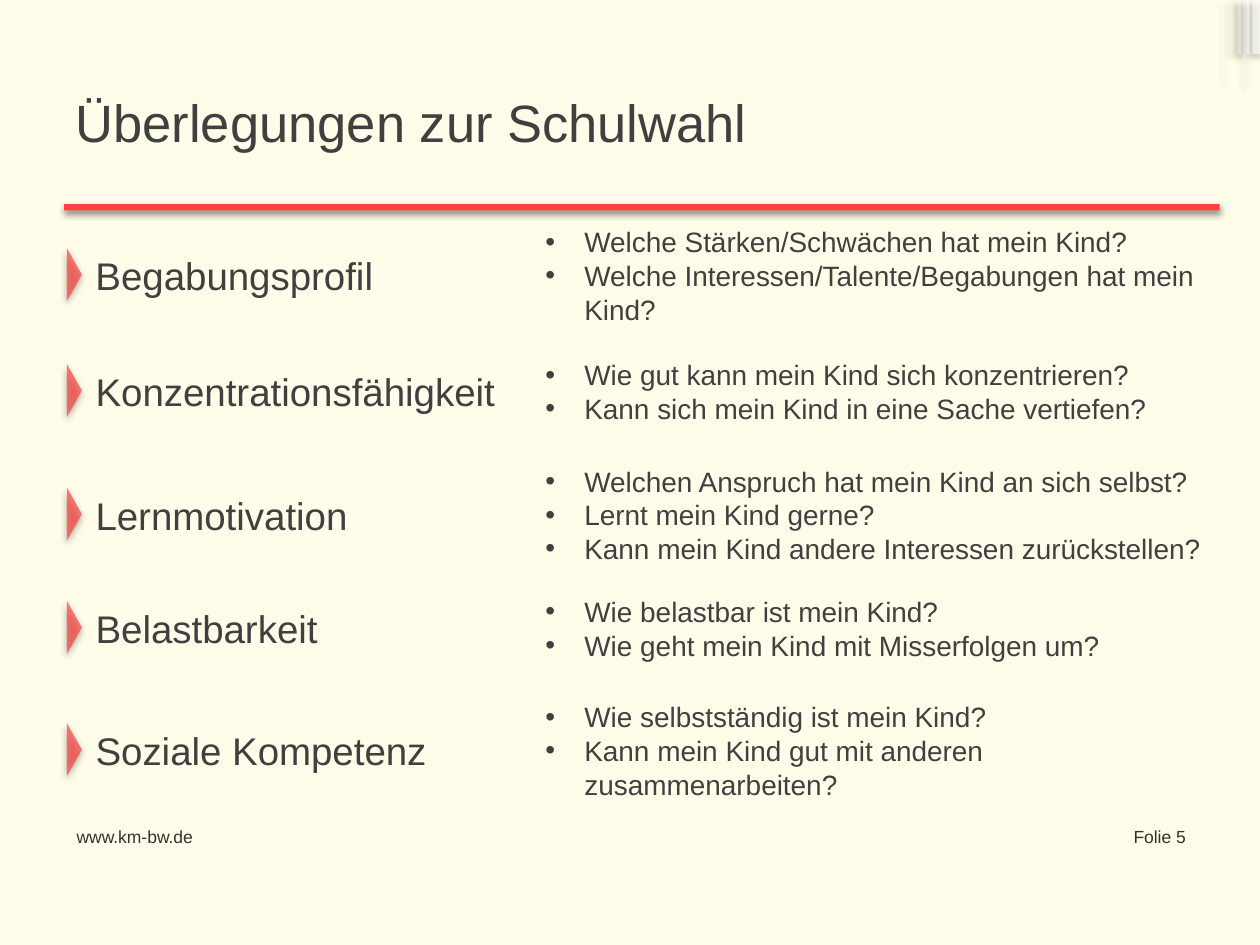
from lxml import etree
from pptx import Presentation
from pptx.dml.color import RGBColor
from pptx.enum.shapes import MSO_SHAPE
from pptx.enum.text import MSO_ANCHOR, MSO_AUTO_SIZE, PP_ALIGN
from pptx.oxml.ns import qn
from pptx.util import Inches, Pt

COLORS = {"cream": "FFFDE9", "red": "FF4040", "white": "FFFFFF",
          "shadow": "000000", "text": "404040", "footer": "323232"}

deck = Presentation()
deck.slide_width, deck.slide_height = Inches(10), Inches(7.5)
page = deck.slides.add_slide(deck.slide_layouts[5])
page.background.fill.solid()
page.background.fill.fore_color.rgb = RGBColor.from_string(COLORS["cream"])


def add_box(kind, left, top, width, height, color=None, opacity=100, shadow=0):
    """Add a borderless shape; opacity and shadow strength are percentages."""
    box = page.shapes.add_shape(
        kind, Inches(left), Inches(top), Inches(width), Inches(height))
    box.line.fill.background()
    box.shadow.inherit = False
    if color:
        box.fill.solid()
        box.fill.fore_color.rgb = RGBColor.from_string(COLORS[color])
        if opacity < 100:
            fill_color = box.fill._xPr.find(".//" + qn("a:srgbClr"))
            etree.SubElement(fill_color, qn("a:alpha"), val=str(opacity * 1000))
    else:
        box.fill.background()
    if shadow:
        effects = box._element.spPr.find(qn("a:effectLst"))
        outer = etree.SubElement(
            effects, qn("a:outerShdw"), blurRad=str(Pt(4)), dist=str(Pt(2)),
            dir="5400000", algn="ctr", rotWithShape="0")
        shade = etree.SubElement(outer, qn("a:srgbClr"), val=COLORS["shadow"])
        etree.SubElement(shade, qn("a:alpha"), val=str(shadow * 1000))
    return box


def write(box, lines, size, color="text", align=PP_ALIGN.LEFT, anchor=MSO_ANCHOR.MIDDLE):
    """Fill a box with one paragraph per line in a uniform font."""
    frame = box.text_frame
    frame.word_wrap = True
    frame.auto_size = MSO_AUTO_SIZE.NONE
    frame.vertical_anchor = anchor
    frame.text = "\n".join(lines)
    for para in frame.paragraphs:
        para.alignment = align
        for span in para.runs:
            span.font.name = "Arial"
            span.font.size = Pt(size)
            span.font.color.rgb = RGBColor.from_string(COLORS[color])
    return frame.paragraphs


# Corner stripes: left, width, height, opacity
for left, width, height, opacity in [
        (9.89, 0.03, 0.43, 65), (9.94, 0.06, 0.43, 65), (9.7, 0.01, 0.64, 30),
        (9.87, 0.01, 0.68, 60), (9.75, 0.06, 0.43, 20), (9.82, 0.03, 0.43, 40)]:
    add_box(MSO_SHAPE.RECTANGLE, left, 0, width, height, "white", opacity, 40)

# Footer
for text, left, width, align in [
        ("www.km-bw.de", 0.51, 1.33, PP_ALIGN.LEFT),
        ("Folie 5", 8.54, 0.97, PP_ALIGN.RIGHT)]:
    box = page.shapes.add_textbox(Inches(left), Inches(6.51), Inches(width), Inches(0.39))
    write(box, [text], 10, "footer", align, MSO_ANCHOR.TOP)

# Title and rule
title = page.shapes.title
title.left, title.top, title.width, title.height = (
    Inches(0.5), Inches(0.61), Inches(9), Inches(0.77))
heading = write(title, ["Überlegungen zur Schulwahl"], 30)[0]
heading.line_spacing = 0.9
heading.space_after = Pt(4.5)
add_box(MSO_SHAPE.RECTANGLE, 0.51, 1.62, 9.17, 0.05, "red", shadow=45)

# Criteria: top, label width, label, question width, questions
CRITERIA = [
    (1.79, 2.53, "Begabungsprofil", 5.44,
     ["Welche Stärken/Schwächen hat mein Kind?",
      "Welche Interessen/Talente/Begabungen hat mein Kind?"]),
    (2.71, 3.45, "Konzentrationsfähigkeit", 5.44,
     ["Wie gut kann mein Kind sich konzentrieren?",
      "Kann sich mein Kind in eine Sache vertiefen?"]),
    (3.69, 2.55, "Lernmotivation", 5.63,
     ["Welchen Anspruch hat mein Kind an sich selbst?",
      "Lernt mein Kind gerne?",
      "Kann mein Kind andere Interessen zurückstellen?"]),
    (4.59, 2.52, "Belastbarkeit", 5.45,
     ["Wie belastbar ist mein Kind?",
      "Wie geht mein Kind mit Misserfolgen um?"]),
    (5.56, 3.31, "Soziale Kompetenz", 5.77,
     ["Wie selbstständig ist mein Kind?",
      "Kann mein Kind gut mit anderen",
      "zusammenarbeiten?"]),
]
ROW_HEIGHT = 0.79
for top, label_width, label, question_width, questions in CRITERIA:
    label_box = add_box(MSO_SHAPE.ROUNDED_RECTANGLE, 0.66, top, label_width, ROW_HEIGHT)
    question_box = add_box(
        MSO_SHAPE.ROUNDED_RECTANGLE, 4.23, top, question_width, ROW_HEIGHT, "cream")
    label_box.adjustments[0] = question_box.adjustments[0] = 0
    write(label_box, [label], 22)

    for para in write(question_box, questions, 16):
        properties = para._p.get_or_add_pPr()
        properties.set("marL", str(Inches(0.31)))
        if para.text[0].islower():  # continuation of the question above
            properties.set("indent", "0")
            continue
        properties.set("indent", str(-Inches(0.31)))
        bullet_color = etree.SubElement(properties, qn("a:buClr"))
        etree.SubElement(bullet_color, qn("a:srgbClr"), val=COLORS["text"])
        etree.SubElement(properties, qn("a:buFont"), typeface="Arial")
        etree.SubElement(properties, qn("a:buChar"), char="•")

    marker = add_box(MSO_SHAPE.PENTAGON, 0.53, top + 0.18, 0.12, 0.42, "red", 68, 45)
    marker.adjustments[0] = 0.99

deck.save("out.pptx")
